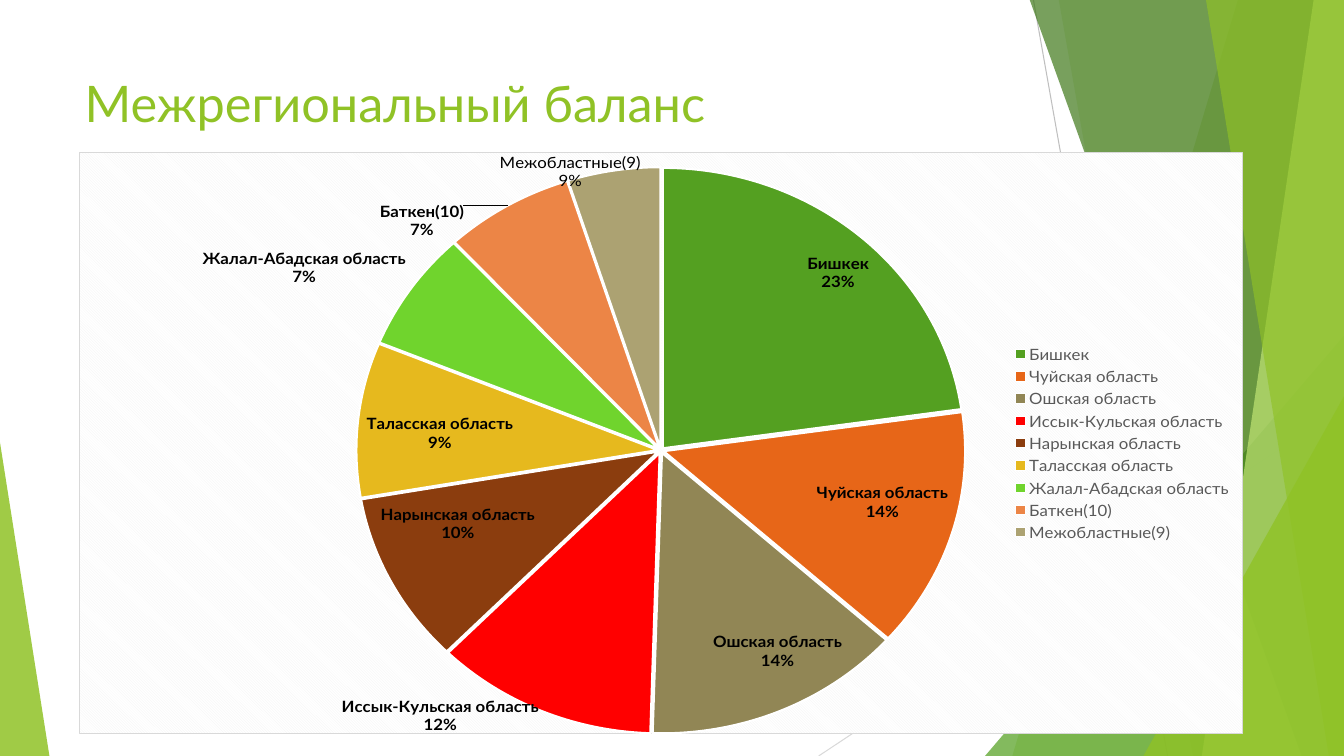
import pptx
import pptx.chart.data
import pptx.dml.color
import pptx.enum.chart
import pptx.enum.shapes
import pptx.enum.text
import pptx.oxml
import pptx.util
from pptx.util import Inches

FONT = "Lato"
A = "http://schemas.openxmlformats.org/drawingml/2006/main"
C = "http://schemas.openxmlformats.org/drawingml/2006/chart"
NS = f'xmlns:a="{A}" xmlns:c="{C}"'


def paint(fill, color, alpha=100):
    """Fill with a solid colour; alpha is opacity in percent."""
    fill.solid()
    fill.fore_color.rgb = pptx.dml.color.RGBColor.from_string(color)
    if alpha < 100:
        clr = fill._xPr.find(f".//{{{A}}}srgbClr")
        clr.append(pptx.oxml.parse_xml(f'<a:alpha {NS} val="{alpha * 1000}"/>'))


def set_font(font, size, color, bold=False):
    font.name = FONT
    font.size = pptx.util.Pt(size)
    font.bold = bold
    paint(font.fill, color)


prs = pptx.Presentation()
prs.slide_width, prs.slide_height = Inches(13.33), Inches(7.5)
s = prs.slides.add_slide(prs.slide_layouts[6])

# Decorative lines and translucent facets
for x1, y1, x2, y2, color in [(10.25, 0, 11.58, 7.5, "BFBFBF"),
                              (13.33, 4.03, 8.12, 7.5, "D9D9D9")]:
    line = s.shapes.add_connector(pptx.enum.shapes.MSO_CONNECTOR.STRAIGHT,
                                  Inches(x1), Inches(y1), Inches(x2), Inches(y2))
    line.line.width = pptx.util.Pt(0.75)
    paint(line.line.fill, color)
    line._element.spPr.append(pptx.oxml.parse_xml(f"<a:effectLst {NS}/>"))

# Bands run from a top x and a bottom x to the right edge;
# triangles have left, top, width, height and apex position.
facets = [
    ("band", (12.28, 10.04), "90C226", 30),
    ("band", (10.5, 11.83), "90C226", 20),
    ("triangle", (9.77, 3.33, 3.56, 4.17, 1), "54A021", 72),
    ("band", (10.21, 12.91), "3F7819", 70),
    ("band", (13.03, 11.92), "C0E474", 70),
    ("band", (11.96, 13.18), "90C226", 65),
    ("triangle", (11.34, 3.93, 1.99, 3.57, 1), "90C226", 80),
    ("triangle", (0, 4.39, 0.49, 3.11, 0), "90C226", 85),
]
for kind, geometry, color, alpha in facets:
    if kind == "band":
        top_x, bottom_x = geometry
        ff = s.shapes.build_freeform(Inches(top_x), Inches(-0.01))
        ff.add_line_segments([(Inches(x), Inches(y)) for x, y in
                              [(13.33, -0.01), (13.33, 7.5), (bottom_x, 7.5)]])
        sp = ff.convert_to_shape()
    else:
        *box, apex = geometry
        sp = s.shapes.add_shape(pptx.enum.shapes.MSO_SHAPE.ISOSCELES_TRIANGLE,
                                *map(Inches, box))
        sp.adjustments[0] = apex
    sp.shadow.inherit = False
    sp.line.fill.background()
    paint(sp.fill, color, alpha)

# Title
title = s.shapes.add_textbox(Inches(0.74), Inches(0.67), Inches(9.4), Inches(1.44))
tf = title.text_frame
tf.word_wrap = True
tf.vertical_anchor = pptx.enum.text.MSO_ANCHOR.TOP
tf.text = "Межрегиональный баланс"
set_font(tf.paragraphs[0].runs[0].font, 36, "90C226")

# Pie chart
regions = [
    ("Бишкек", 23, "54A021"),
    ("Чуйская область", 14, "E76618"),
    ("Ошская область", 14, "918655"),
    ("Иссык-Кульская область", 12, "FF0000"),
    ("Нарынская область", 10, "8B3D0E"),
    ("Таласская область", 9, "E6B91E"),
    ("Жалал-Абадская область", 7, "70D42D"),
    ("Баткен(10)", 7, "EC8546"),
    ("Межобластные(9)", 5, "ACA272"),
]
data = pptx.chart.data.CategoryChartData()
data.categories = [name for name, _, _ in regions]
data.add_series("Series 1", [value for _, value, _ in regions])
chart = s.shapes.add_chart(pptx.enum.chart.XL_CHART_TYPE.PIE, Inches(0.78), Inches(1.27),
                           Inches(11.55), Inches(6.2), data).chart
chart.has_title = False
set_font(chart.font, 10, "000000")
chart.has_legend = True
chart.legend.position = pptx.enum.chart.XL_LEGEND_POSITION.RIGHT
chart.legend.include_in_layout = False
set_font(chart.legend.font, 12, "595959")

plot = chart.plots[0]
plot.vary_by_categories = True
series = plot.series[0]
for i, (_, _, color) in enumerate(regions):
    fmt = series.points[i].format
    paint(fmt.fill, color)
    fmt.line.width = pptx.util.Pt(1.5)
    paint(fmt.line.fill, "FFFFFF")
series._element.find(f"{{{C}}}tx").addnext(
    pptx.oxml.parse_xml(f'<c:explosion {NS} val="1"/>'))

labels = series.data_labels
labels.show_category_name = True
labels.show_percentage = True
labels.show_value = False
labels.position = pptx.enum.chart.XL_LABEL_POSITION.BEST_FIT
set_font(labels.font, 12, "000000", bold=True)
labels._element.find(f"{{{C}}}showBubbleSize").addnext(
    pptx.oxml.parse_xml(f"<c:separator {NS}>\n</c:separator>"))

tf = series.points[8].data_label.text_frame
tf.text = "Межобластные(9)\n9%"
for p in tf.paragraphs:
    set_font(p.runs[0].font, 12, "000000")
series.points[8].data_label.position = pptx.enum.chart.XL_LABEL_POSITION.BEST_FIT

# Plot placement, hatched background and border
area = chart._chartSpace.find(f".//{{{C}}}plotArea")
for old in area.findall(f"{{{C}}}layout"):
    area.remove(old)
area.insert(0, pptx.oxml.parse_xml(
    f'<c:layout {NS}><c:manualLayout><c:layoutTarget val="inner"/>'
    '<c:xMode val="edge"/><c:yMode val="edge"/><c:x val="0"/><c:y val="0.025"/>'
    '<c:w val="1"/><c:h val="0.975"/></c:manualLayout></c:layout>'))
chart._chartSpace.find(f"{{{C}}}chart").addnext(pptx.oxml.parse_xml(
    f'<c:spPr {NS}><a:pattFill prst="dkDnDiag"><a:fgClr><a:srgbClr val="F2F2F2"/></a:fgClr>'
    '<a:bgClr><a:srgbClr val="FFFFFF"/></a:bgClr></a:pattFill>'
    '<a:ln w="9525"><a:solidFill><a:srgbClr val="D9D9D9"/></a:solidFill></a:ln></c:spPr>'))

prs.save("out.pptx")
